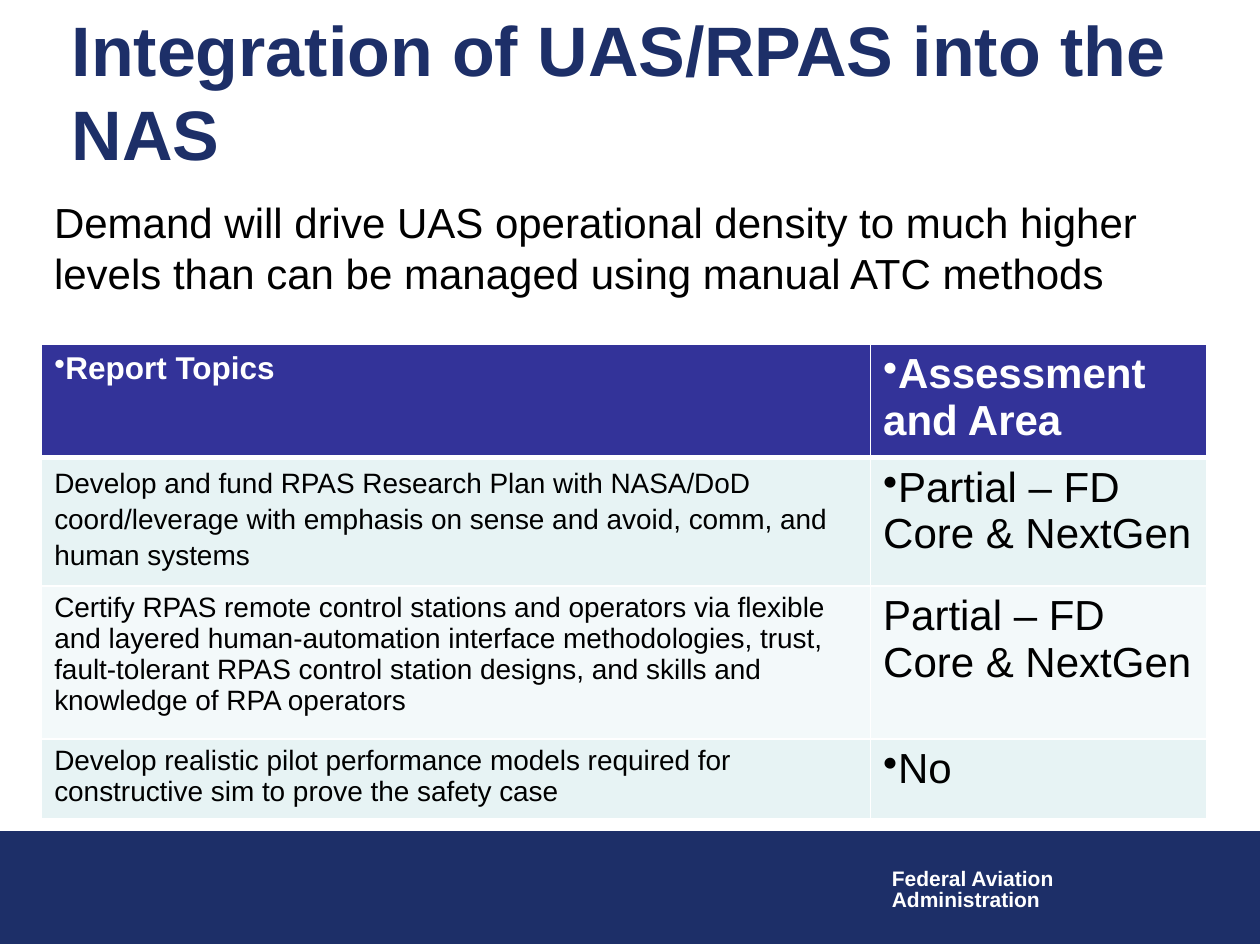
from dataclasses import dataclass

from lxml import etree
from pptx import Presentation
from pptx.dml.color import RGBColor
from pptx.enum.shapes import MSO_SHAPE
from pptx.enum.text import MSO_ANCHOR, MSO_AUTO_SIZE, PP_ALIGN
from pptx.oxml.ns import qn
from pptx.util import Cm, Pt

RECTANGLE = MSO_SHAPE.RECTANGLE
MIDDLE = MSO_ANCHOR.MIDDLE
FIXED = MSO_AUTO_SIZE.NONE
LEFT = PP_ALIGN.LEFT

FONT = "Arial"
COLORS = {
    "navy": "1D2F68",
    "header": "333399",
    "odd_row": "E7F3F4",
    "even_row": "F3F9FA",
    "black": "000000",
    "white": "FFFFFF",
}
COLUMN_WIDTHS = (16.71, 6.78)
THIN, THICK = 1, 3


@dataclass
class Entry:
    text: str
    size: int
    bullet: bool = False
    spacing: float = 1.0


@dataclass
class Row:
    height: float
    topic: Entry
    assessment: Entry


ROWS = [
    Row(2.11, Entry("Report Topics", 18, True), Entry("Assessment and Area", 24, True)),
    Row(
        2.42,
        Entry(
            "Develop and fund RPAS Research Plan with NASA/DoD coord/leverage "
            "with emphasis on sense and avoid, comm, and human systems",
            16,
            spacing=1.15,
        ),
        Entry("Partial – FD Core & NextGen", 24, True),
    ),
    Row(
        3.08,
        Entry(
            "Certify RPAS remote control stations and operators via flexible and "
            "layered human-automation interface methodologies, trust, "
            "fault-tolerant RPAS control station designs, and skills and "
            "knowledge of RPA operators",
            16,
        ),
        Entry("Partial – FD Core & NextGen", 24),
    ),
    Row(
        1.5,
        Entry(
            "Develop realistic pilot performance models required for "
            "constructive sim to prove the safety case",
            16,
        ),
        Entry("No", 24, True),
    ),
]


def color(name: str) -> RGBColor:
    return RGBColor.from_string(COLORS[name])


def style(paragraph, size: int, color_name: str, bold: bool = False) -> None:
    paragraph.alignment = LEFT
    font = paragraph.font
    font.name = FONT
    font.size = Pt(size)
    font.bold = bold
    font.color.rgb = color(color_name)


def add_bullet(paragraph) -> None:
    properties = paragraph._p.get_or_add_pPr()
    properties.set("marL", "0")
    properties.set("indent", "0")
    etree.SubElement(properties, qn("a:buChar"), char="•")


def add_borders(cell, top: int, bottom: int) -> None:
    properties = cell._tc.get_or_add_tcPr()
    sides = (("lnL", THIN), ("lnR", THIN), ("lnT", top), ("lnB", bottom))
    for position, (side, width) in enumerate(sides):
        border = etree.Element(qn(f"a:{side}"), w=str(Pt(width)))
        fill = etree.SubElement(border, qn("a:solidFill"))
        etree.SubElement(fill, qn("a:srgbClr"), val=COLORS["white"])
        properties.insert(position, border)


def fill_cell(cell, entry: Entry, row_index: int) -> None:
    is_header = row_index == 0
    fill_name = "header" if is_header else ("odd_row" if row_index % 2 else "even_row")
    cell.fill.solid()
    cell.fill.fore_color.rgb = color(fill_name)
    add_borders(cell, THICK if row_index == 1 else THIN, THICK if is_header else THIN)
    cell.text = entry.text
    paragraph = cell.text_frame.paragraphs[0]
    if entry.bullet:
        add_bullet(paragraph)
    if entry.spacing != 1:
        paragraph.line_spacing = entry.spacing
    style(paragraph, entry.size, "white" if is_header else "black", is_header)


def add_footer(slide) -> None:
    band = slide.shapes.add_shape(RECTANGLE, Cm(0), Cm(16.76), Cm(25.4), Cm(2.26))
    band.shadow.inherit = False
    band.fill.solid()
    band.fill.fore_color.rgb = color("navy")
    band.line.color.rgb = color("navy")
    band.line.width = Pt(0.75)

    agency = slide.shapes.add_textbox(Cm(17.73), Cm(17.4), Cm(3.81), Cm(1.12)).text_frame
    agency.word_wrap = False
    agency.text = "Federal Aviation\nAdministration"
    for paragraph in agency.paragraphs:
        paragraph.line_spacing = 0.85
        style(paragraph, 12, "white", True)


def add_title(slide) -> None:
    title = slide.shapes.title
    title.left, title.top, title.width, title.height = Cm(1.19), Cm(0.97), Cm(23.55), Cm(1.7)
    frame = title.text_frame
    frame.text = "Integration of UAS/RPAS into the NAS"
    frame.word_wrap = True
    frame.auto_size = FIXED
    frame.vertical_anchor = MIDDLE
    style(frame.paragraphs[0], 40, "navy", True)


def add_topics_table(slide) -> None:
    table = slide.shapes.add_table(
        len(ROWS),
        len(COLUMN_WIDTHS),
        Cm(0.84),
        Cm(6.94),
        Cm(sum(COLUMN_WIDTHS)),
        Cm(sum(row.height for row in ROWS)),
    ).table
    for column, width in zip(table.columns, COLUMN_WIDTHS):
        column.width = Cm(width)
    for index, row in enumerate(ROWS):
        table.rows[index].height = Cm(row.height)
        for column_index, entry in enumerate((row.topic, row.assessment)):
            fill_cell(table.cell(index, column_index), entry, index)


def add_demand_statement(slide) -> None:
    statement = slide.shapes.add_textbox(Cm(0.84), Cm(3.84), Cm(23.29), Cm(2.31)).text_frame
    statement.word_wrap = True
    statement.text = (
        "Demand will drive UAS operational density to much higher levels "
        "than can be managed using manual ATC methods"
    )
    style(statement.paragraphs[0], 24, "black")


def main() -> None:
    presentation = Presentation()
    presentation.slide_width = Cm(25.4)
    presentation.slide_height = Cm(19.05)
    slide = presentation.slides.add_slide(presentation.slide_layouts[5])
    add_footer(slide)
    add_title(slide)
    add_topics_table(slide)
    add_demand_statement(slide)
    presentation.save("out.pptx")


if __name__ == "__main__":
    main()
